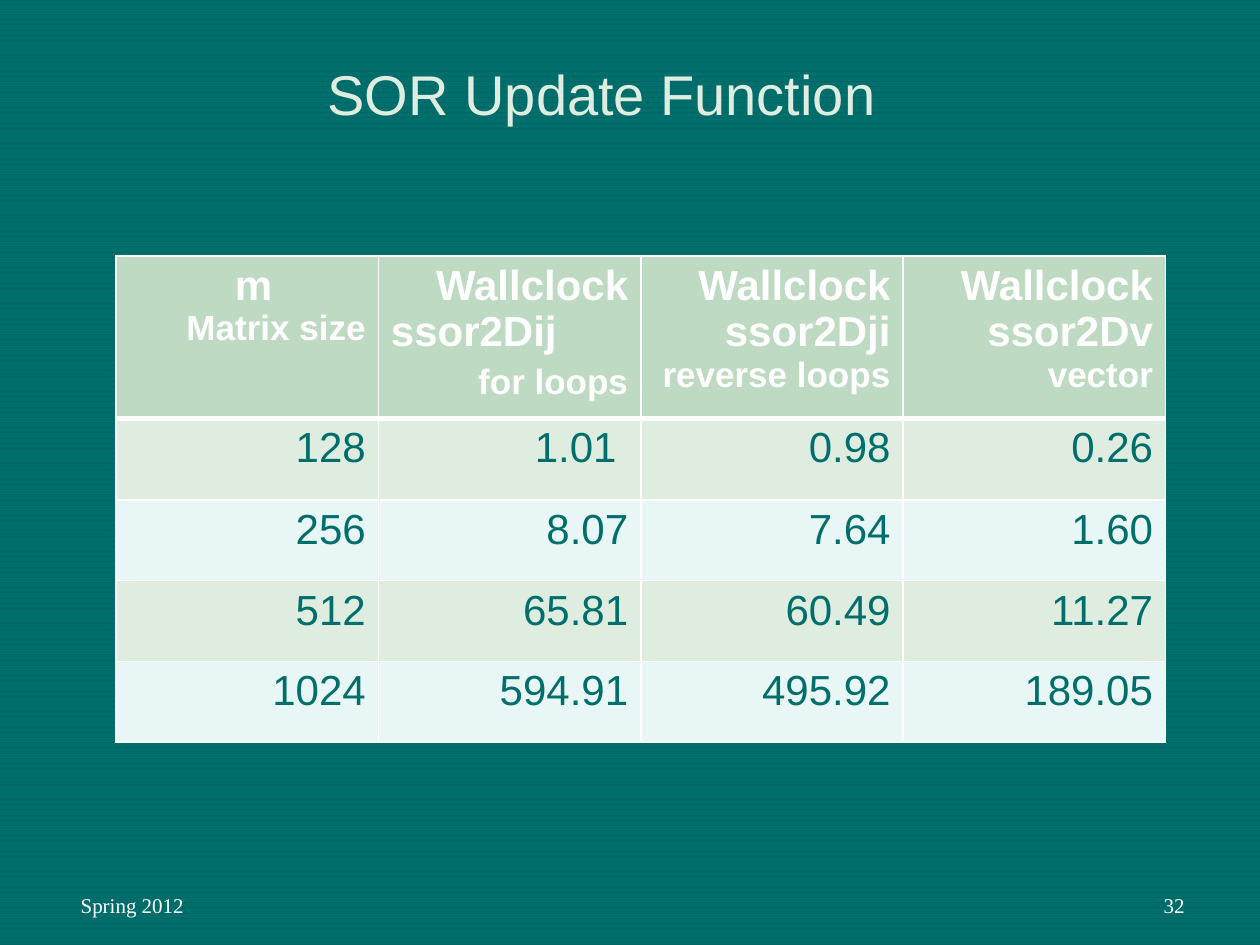
from lxml.etree import SubElement
from pptx import Presentation
from pptx.dml.color import RGBColor
from pptx.enum.dml import MSO_PATTERN
from pptx.enum.text import MSO_ANCHOR, MSO_AUTO_SIZE, PP_ALIGN
from pptx.oxml.ns import qn
from pptx.util import Inches, Pt

COLORS = {
    "teal": "006E6B",
    "stripe": "006666",
    "white": "FFFFFF",
    "header": "BFDAC3",
    "green": "DFEDE1",
    "pale": "E8F6F6",
}
LEFT, CENTER, RIGHT = PP_ALIGN.LEFT, PP_ALIGN.CENTER, PP_ALIGN.RIGHT

HEADERS = [
    [(CENTER, [("m", 24)]), (RIGHT, [("Matrix size", 20)])],
    [(RIGHT, [("Wallclock", 24)]), (LEFT, [("ssor2Dij", 24)]),
     (RIGHT, [("for loops", 20)])],
    [(RIGHT, [("Wallclock", 24)]),
     (RIGHT, [("ssor2Dji ", 24), ("reverse loops", 20)])],
    [(RIGHT, [("Wallclock", 24)]),
     (RIGHT, [("ssor2Dv ", 24), ("vector", 20)])],
]
TIMINGS = [
    ["128", "1.01 ", "0.98", "0.26"],
    ["256", "8.07", "7.64", "1.60"],
    ["512", "65.81", "60.49", "11.27"],
    ["1024", "594.91", "495.92", "189.05"],
]


def rgb(name):
    return RGBColor.from_string(COLORS[name])


class Deck:
    def __init__(self):
        self.prs = Presentation()
        self.prs.slide_width = Inches(10)
        self.prs.slide_height = Inches(7.5)
        self.slide = self.prs.slides.add_slide(self.prs.slide_layouts[5])

    def background(self):
        fill = self.slide.background.fill
        fill.patterned()
        fill.pattern = MSO_PATTERN.DARK_HORIZONTAL
        fill.fore_color.rgb = rgb("teal")
        fill.back_color.rgb = rgb("stripe")

    def run(self, p, text, size, color, font="Arial", bold=False):
        r = p.add_run()
        r.text = text
        r.font.size = Pt(size)
        r.font.name = font
        r.font.bold = bold
        r.font.color.rgb = rgb(color)

    def title(self, text, x, y, w, h):
        sp = self.slide.shapes.title
        sp.left, sp.top, sp.width, sp.height = map(Inches, (x, y, w, h))
        tf = sp.text_frame
        tf.auto_size = MSO_AUTO_SIZE.NONE
        tf.vertical_anchor = MSO_ANCHOR.TOP
        p = tf.paragraphs[0]
        p.alignment = LEFT
        self.run(p, text, 32, "green")

    def footer(self, text, x, align, inset=0.1):
        sp = self.slide.shapes.add_textbox(
            Inches(x), Inches(6.83), Inches(2.33), Inches(0.5))
        tf = sp.text_frame
        tf.word_wrap = True
        tf.vertical_anchor = MSO_ANCHOR.BOTTOM
        tf.margin_left = Inches(inset)
        p = tf.paragraphs[0]
        p.alignment = align
        self.run(p, text, 12, "white", "Times New Roman")

    def borders(self, cell, top, bottom):
        tcPr = cell._tc.get_or_add_tcPr()
        widths = {"a:lnL": 1, "a:lnR": 1, "a:lnT": top, "a:lnB": bottom}
        for tag, width in widths.items():
            ln = SubElement(tcPr, qn(tag), w=str(Pt(width)))
            fill = SubElement(ln, qn("a:solidFill"))
            SubElement(fill, qn("a:srgbClr"), val=COLORS["white"])

    def cell(self, cell, paragraphs, fill, color, bold=False, top=1, bottom=1):
        self.borders(cell, top, bottom)
        cell.fill.solid()
        cell.fill.fore_color.rgb = rgb(fill)
        tf = cell.text_frame
        for i, (align, runs) in enumerate(paragraphs):
            p = tf.add_paragraph() if i else tf.paragraphs[0]
            p.alignment = align
            if align == CENTER:
                p._p.get_or_add_pPr().set("marL", str(Inches(0.1)))
            if i == 2:
                p.space_before = Pt(4)
            for text, size in runs:
                self.run(p, text, size, color, bold=bold)

    def table(self, headers, rows, x, y, col_width, heights):
        cols = len(headers)
        table = self.slide.shapes.add_table(
            len(rows) + 1, cols, Inches(x), Inches(y),
            Inches(col_width * cols), Inches(sum(heights))).table
        for col in table.columns:
            col.width = Inches(col_width)
        for row, height in zip(table.rows, heights):
            row.height = Inches(height)
        for c, paragraphs in enumerate(headers):
            self.cell(table.cell(0, c), paragraphs, "header", "white",
                      bold=True, bottom=3)
        for r, values in enumerate(rows, 1):
            for c, value in enumerate(values):
                self.cell(table.cell(r, c), [(RIGHT, [(value, 24)])],
                          "green" if r % 2 else "pale", "teal",
                          top=3 if r == 1 else 1)


def main():
    deck = Deck()
    deck.background()
    deck.footer("Spring 2012", 0.5, LEFT, inset=0.14)
    deck.footer("32", 7.17, RIGHT)
    deck.table(HEADERS, TIMINGS, 0.92, 2.03, 2.083,
               [1.23, 0.65, 0.64, 0.64, 0.64])
    deck.title("SOR Update Function", 2.5, 0.42, 4.67, 0.64)
    deck.prs.save("out.pptx")


if __name__ == "__main__":
    main()
